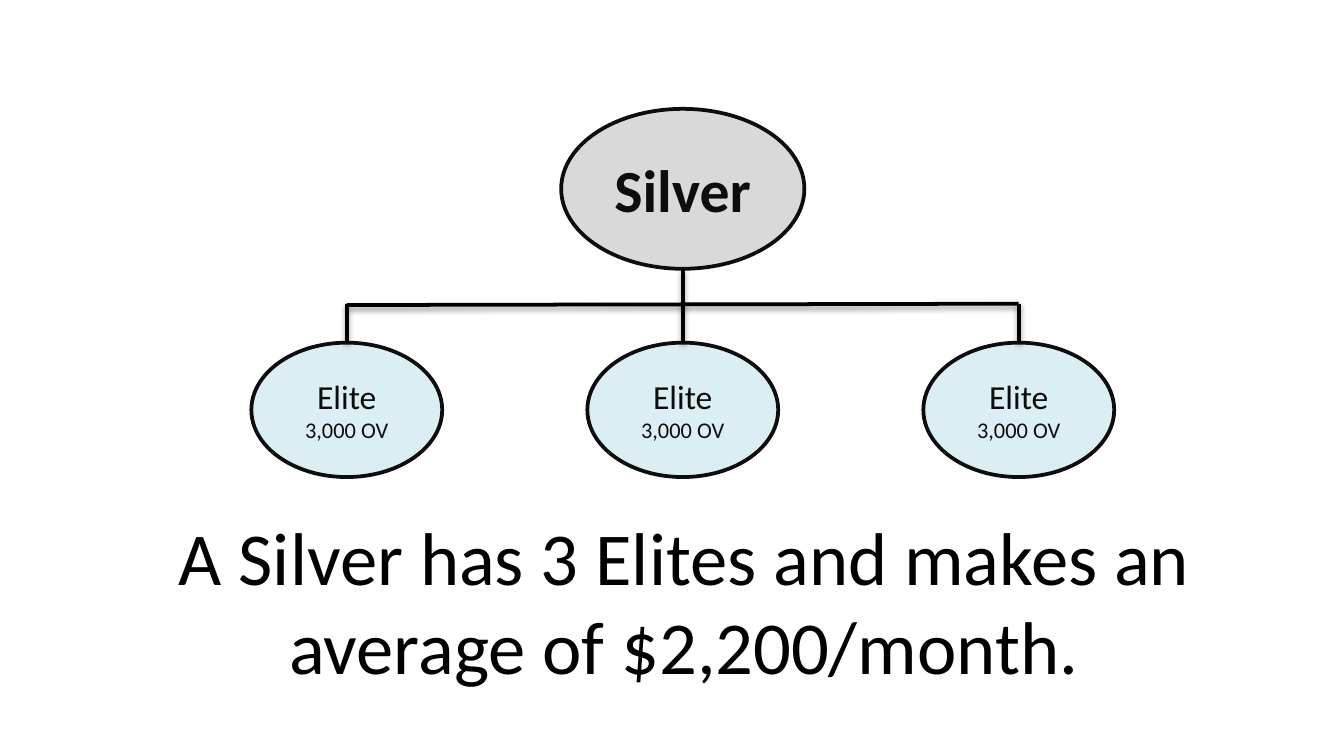
from dataclasses import dataclass

from lxml.etree import SubElement
from pptx import Presentation
from pptx.dml.color import RGBColor
from pptx.enum.shapes import MSO_CONNECTOR, MSO_SHAPE
from pptx.enum.text import MSO_ANCHOR, MSO_AUTO_SIZE, PP_ALIGN
from pptx.oxml.ns import qn
from pptx.shapes.autoshape import Shape
from pptx.shapes.connector import Connector
from pptx.slide import Slide
from pptx.text.text import TextFrame
from pptx.util import Inches, Pt

BLACK = RGBColor(0x00, 0x00, 0x00)
INK = RGBColor(0x0D, 0x0D, 0x0D)
SILVER_GREY = RGBColor(0xD9, 0xD9, 0xD9)
ELITE_BLUE = RGBColor(0xDB, 0xEE, 0xF4)
FONT = "Calibri"

PAGE_WIDTH = 10
CENTER_X = 5.08
ELITE_GAP = 2.5
ELITE_TOP = 2.55
BAR_Y = 2.26
SILVER_BOTTOM = 2.0


@dataclass(frozen=True)
class Line:
    text: str
    size: int
    bold: bool = False


@dataclass(frozen=True)
class Rank:
    center_x: float
    top: float
    width: float
    height: float
    fill: RGBColor
    lines: tuple[Line, ...]


def write_lines(frame: TextFrame, lines: tuple[Line, ...], color: RGBColor) -> None:
    frame.word_wrap = True
    for index, line in enumerate(lines):
        para = frame.add_paragraph() if index else frame.paragraphs[0]
        para.alignment = PP_ALIGN.CENTER
        span = para.add_run()
        span.text = line.text
        span.font.name = FONT
        span.font.size = Pt(line.size)
        span.font.bold = line.bold
        span.font.color.rgb = color


def draw_rank(page: Slide, rank: Rank) -> Shape:
    oval = page.shapes.add_shape(
        MSO_SHAPE.OVAL, Inches(rank.center_x - rank.width / 2), Inches(rank.top),
        Inches(rank.width), Inches(rank.height))
    oval.shadow.inherit = False
    oval.fill.solid()
    oval.fill.fore_color.rgb = rank.fill
    oval.line.color.rgb = INK
    oval.line.width = Pt(2)
    oval.text_frame.vertical_anchor = MSO_ANCHOR.MIDDLE
    write_lines(oval.text_frame, rank.lines, INK)
    return oval


def draw_link(page: Slide, x1: float, y1: float, x2: float, y2: float) -> Connector:
    link = page.shapes.add_connector(
        MSO_CONNECTOR.STRAIGHT, Inches(x1), Inches(y1), Inches(x2), Inches(y2))
    link.line.color.rgb = BLACK
    link.line.width = Pt(2)
    # Soft shadow straight below the line
    effects = SubElement(link._element.spPr, qn("a:effectLst"))
    shadow = SubElement(effects, qn("a:outerShdw"), blurRad=str(Pt(3.1)),
                        dist=str(Pt(1.6)), dir="5400000", rotWithShape="0")
    shade = SubElement(shadow, qn("a:srgbClr"), val=str(BLACK))
    SubElement(shade, qn("a:alpha"), val="38000")
    return link


def main() -> None:
    # Widescreen page, 16:9
    deck = Presentation()
    deck.slide_width = Inches(PAGE_WIDTH)
    deck.slide_height = Inches(PAGE_WIDTH * 9 / 16)
    page = deck.slides.add_slide(deck.slide_layouts[6])

    # Ranks: one Silver above three Elites
    draw_rank(page, Rank(CENTER_X, 0.81, 1.81, 1.19, SILVER_GREY,
                         (Line("Silver", 32, True),)))
    elite_lines = (Line("Elite", 18), Line("3,000 OV", 12))
    centers = [CENTER_X + step * ELITE_GAP for step in (-1, 0, 1)]
    elites = [draw_rank(page, Rank(x, ELITE_TOP, 1.42, 1, ELITE_BLUE, elite_lines))
              for x in centers]

    # Crossbar and drops to each Elite
    draw_link(page, centers[-1], BAR_Y, centers[0], BAR_Y + 0.01)
    for x, elite in zip(centers, elites):
        start_y = SILVER_BOTTOM if x == CENTER_X else BAR_Y
        draw_link(page, x, start_y, x, ELITE_TOP).end_connect(elite, 0)

    # Summary sentence
    box = page.shapes.add_textbox(Inches(0.54), Inches(3.75), Inches(9.1), Inches(1.45))
    box.text_frame.auto_size = MSO_AUTO_SIZE.SHAPE_TO_FIT_TEXT
    summary = Line("A Silver has 3 Elites and makes an average of $2,200/month.", 40)
    write_lines(box.text_frame, (summary,), BLACK)

    deck.save("out.pptx")


if __name__ == "__main__":
    main()
